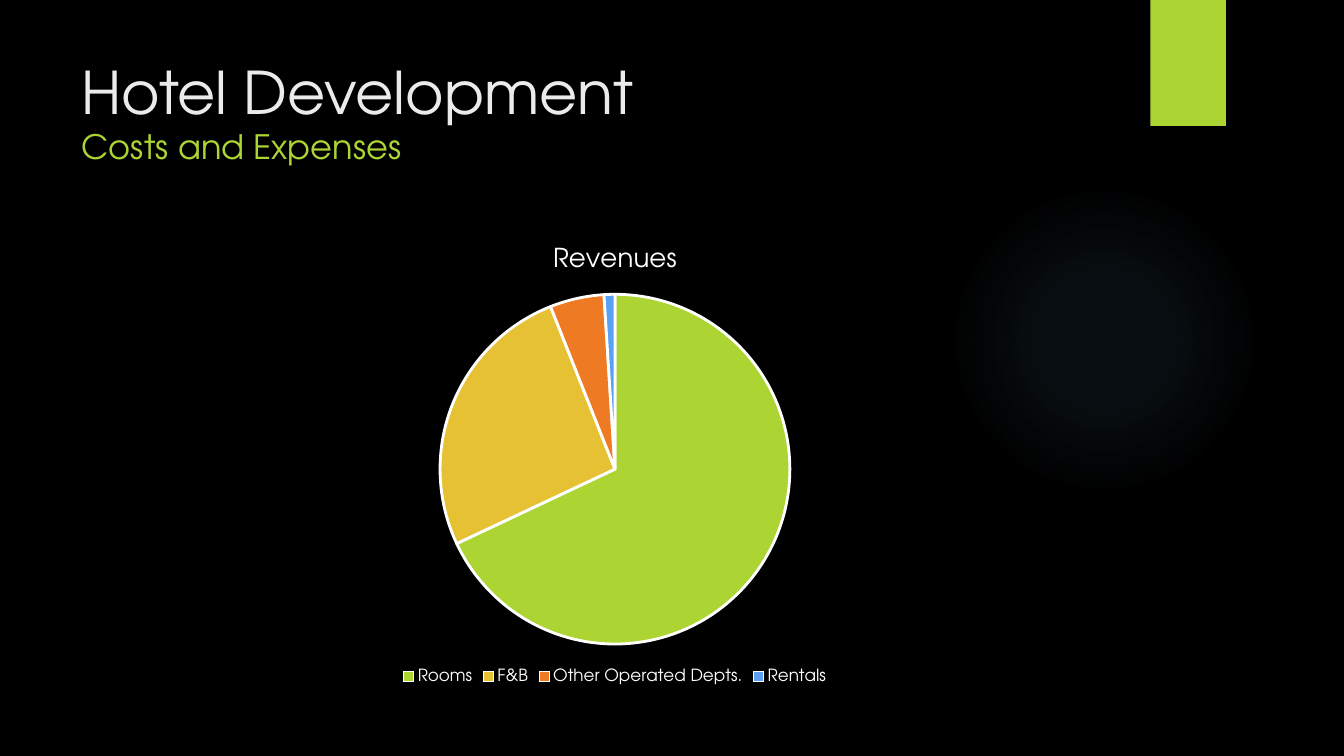
from dataclasses import dataclass

from lxml.etree import SubElement
from pptx import Presentation
from pptx.chart.data import CategoryChartData
from pptx.dml.color import RGBColor
from pptx.enum.chart import XL_CHART_TYPE as ChartType, XL_LEGEND_POSITION as LegendPosition
from pptx.enum.shapes import MSO_SHAPE as Shape
from pptx.enum.text import MSO_ANCHOR as Anchor, MSO_AUTO_SIZE as AutoSize, PP_ALIGN as Align
from pptx.oxml import parse_xml
from pptx.oxml.ns import nsdecls, qn
from pptx.util import Inches, Pt

TITLE = "Hotel Development"
SUBTITLE = "Costs and Expenses"
CHART_TITLE = "Revenues"
REVENUES = [
    ("Rooms", 68, "ACD433"),
    ("F&B", 26, "E6C133"),
    ("Other Operated Depts.", 5, "EF7A24"),
    ("Rentals", 1, "5AA0F5"),
]
GLOW_STOPS = [(0, 7), (36, 6), (69, 0)]

TITLE_BOX = (0.71, 0.5, 10.29, 1.53)
CHART_BOX = (1.21, 2.24, 9.78, 4.59)
GLOW_BOX = (9.41, 1.83, 3.08, 3.08)
TAB_BOX = (11.41, 0, 0.75, 1.25)
PIE_TOP, PIE_SIZE = 2.92, 3.47


@dataclass(frozen=True)
class Theme:
    """Colours, font and type sizes of the slide."""
    font: str = "TeX Gyre Adventor"
    background: str = "000000"
    accent: str = "ACD433"
    glow: str = "7AC4F0"
    heading: str = "EBEBEB"
    chart_text: str = "FFFFFF"
    title_size: float = 42
    subtitle_size: float = 24
    chart_title_size: float = 18.6
    legend_size: float = 12
    chart_size: float = 10


THEME = Theme()


def rgb(color):
    """Return a colour object for a hex string."""
    return RGBColor.from_string(color)


def inches(box):
    """Return the box as lengths."""
    return [Inches(value) for value in box]


def style_font(font, size, color):
    """Set the theme font, size and colour."""
    font.name = THEME.font
    font.size = Pt(size)
    font.bold = False
    font.color.rgb = rgb(color)


def add_plain_shape(slide, kind, box):
    """Add a shape in the accent colour without line or shadow."""
    shape = slide.shapes.add_shape(kind, *inches(box))
    shape.shadow.inherit = False
    shape.fill.solid()
    shape.fill.fore_color.rgb = rgb(THEME.accent)
    shape.line.fill.background()
    return shape


def add_glow(slide):
    """Add the soft circle that fades outward."""
    shape = add_plain_shape(slide, Shape.OVAL, GLOW_BOX)
    stops = "".join(
        f'<a:gs pos="{position * 1000}"><a:srgbClr val="{THEME.glow}">'
        f'<a:alpha val="{alpha * 1000}"/></a:srgbClr></a:gs>'
        for position, alpha in GLOW_STOPS
    )
    gradient = parse_xml(
        f'<a:gradFill {nsdecls("a")} rotWithShape="1"><a:gsLst>{stops}</a:gsLst>'
        '<a:path path="circle"><a:fillToRect l="50000" t="50000" r="50000" b="50000"/>'
        "</a:path></a:gradFill>"
    )
    properties = shape.element.spPr
    properties.replace(properties.find(qn("a:solidFill")), gradient)


def fill_title(slide):
    """Place the title with its subtitle on a second line."""
    title = slide.shapes.title
    title.left, title.top, title.width, title.height = inches(TITLE_BOX)
    frame = title.text_frame
    frame.word_wrap = True
    frame.auto_size = AutoSize.NONE
    frame.vertical_anchor = Anchor.TOP
    paragraph = frame.paragraphs[0]
    paragraph.alignment = Align.LEFT
    heading = paragraph.add_run()
    heading.text = TITLE
    paragraph.add_line_break()
    subtitle = paragraph.add_run()
    subtitle.text = SUBTITLE
    style_font(heading.font, THEME.title_size, THEME.heading)
    style_font(subtitle.font, THEME.subtitle_size, THEME.accent)


def place_pie(chart):
    """Fix the pie in the middle of the chart."""
    _, top, width, height = CHART_BOX
    plot_area = chart.element.chart.plotArea
    for existing in plot_area.findall(qn("c:layout")):
        plot_area.remove(existing)
    layout = parse_xml(f'<c:layout {nsdecls("c")}/>')
    manual = SubElement(layout, qn("c:manualLayout"))
    settings = {
        "layoutTarget": "inner",
        "xMode": "edge",
        "yMode": "edge",
        "x": (1 - PIE_SIZE / width) / 2,
        "y": (PIE_TOP - top) / height,
        "w": PIE_SIZE / width,
        "h": PIE_SIZE / height,
    }
    for name, value in settings.items():
        SubElement(manual, qn(f"c:{name}")).set("val", str(value))
    plot_area.insert(0, layout)


def add_revenue_chart(slide):
    """Add the pie chart of revenues."""
    names, values, colors = zip(*REVENUES)
    data = CategoryChartData()
    data.categories = names
    data.add_series(CHART_TITLE, values)
    chart = slide.shapes.add_chart(ChartType.PIE, *inches(CHART_BOX), data).chart
    style_font(chart.font, THEME.chart_size, THEME.chart_text)

    chart.has_title = True
    chart.chart_title.include_in_layout = False
    paragraph = chart.chart_title.text_frame.paragraphs[0]
    paragraph.text = CHART_TITLE
    style_font(paragraph.font, THEME.chart_title_size, THEME.chart_text)

    chart.has_legend = True
    chart.legend.position = LegendPosition.BOTTOM
    chart.legend.include_in_layout = False
    style_font(chart.legend.font, THEME.legend_size, THEME.chart_text)

    plot = chart.plots[0]
    plot.vary_by_categories = True
    for index, color in enumerate(colors):
        slice_format = plot.series[0].points[index].format
        slice_format.fill.solid()
        slice_format.fill.fore_color.rgb = rgb(color)
        slice_format.line.color.rgb = rgb(THEME.chart_text)
        slice_format.line.width = Pt(2)
    place_pie(chart)


def main():
    """Build and save the slide."""
    presentation = Presentation()
    presentation.slide_width, presentation.slide_height = Inches(13.33), Inches(7.5)
    slide = presentation.slides.add_slide(presentation.slide_layouts[5])
    slide.background.fill.solid()
    slide.background.fill.fore_color.rgb = rgb(THEME.background)
    add_glow(slide)
    add_plain_shape(slide, Shape.RECTANGLE, TAB_BOX)
    fill_title(slide)
    add_revenue_chart(slide)
    presentation.save("out.pptx")


if __name__ == "__main__":
    main()
